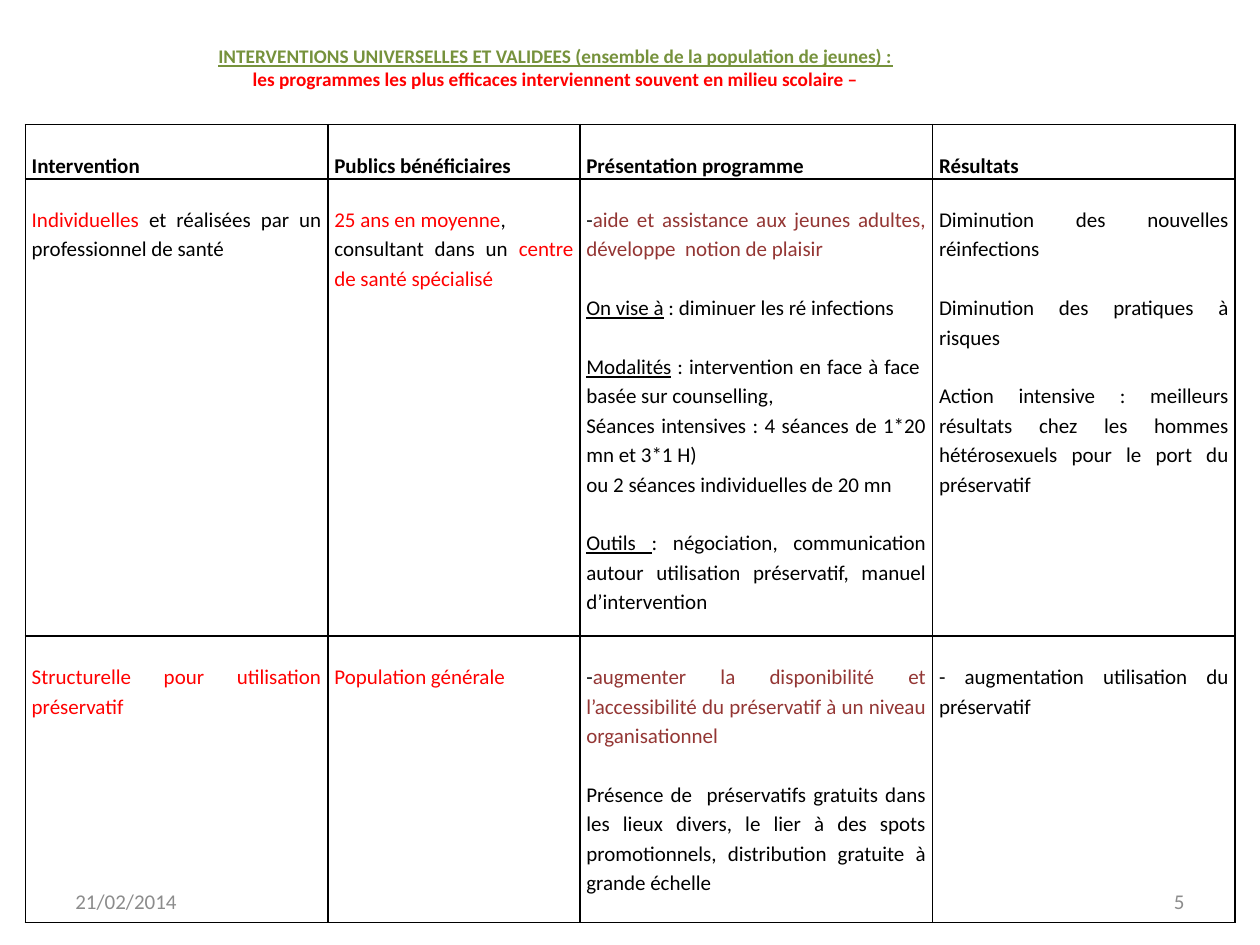
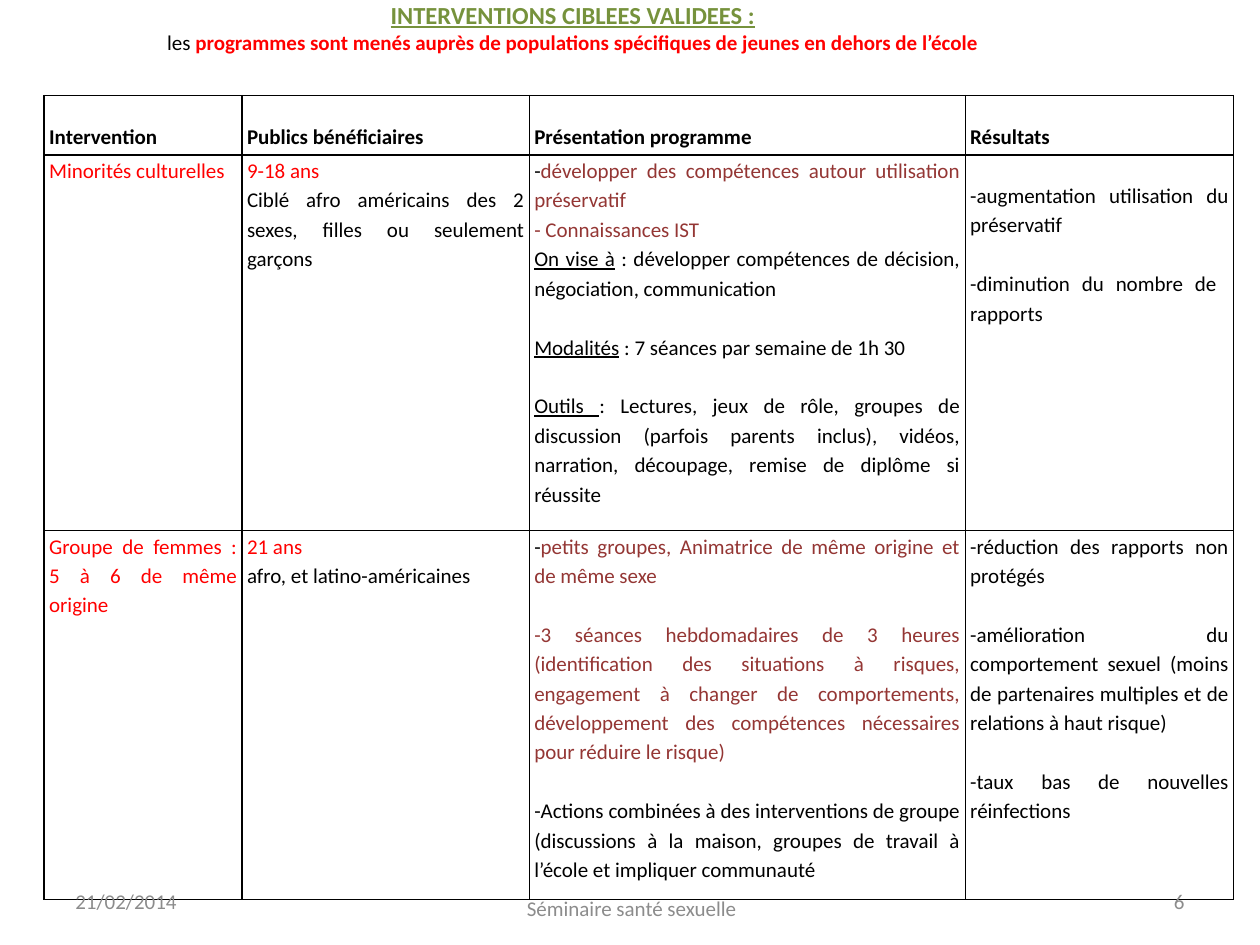
import pptx
import pptx.util
import pptx.dml.color
import pptx.enum.text
import pptx.oxml
import pptx.oxml.ns

Cm = pptx.util.Cm
Pt = pptx.util.Pt
Align = pptx.enum.text.PP_ALIGN
Anchor = pptx.enum.text.MSO_ANCHOR

FONT = "Calibri"
BLACK, RED, BROWN, GREEN, GREY = "000000", "FF0000", "943634", "76923C", "8C8C8C"
GAP = "^"
RUN_STYLES = {
    "*": (RED, False, False),
    "~": (BROWN, False, False),
    "_": (BLACK, False, True),
    "!": (BLACK, True, False),
    "+": (RED, True, False),
    "#": (GREEN, True, True),
    "@": (GREY, False, False),
}
HEADINGS = ["^!Intervention", "^!Publics bénéficiaires",
            "^!Présentation programme", "^!Résultats"]
DATE = "21/02/2014"

slides_content = [
    {
        "title": [
            ("#INTERVENTIONS UNIVERSELLES ET VALIDEES (ensemble de la population de jeunes) :", 11),
            ("+les programmes les plus efficaces interviennent souvent en milieu scolaire –", 11),
        ],
        "title_top": 0.9, "title_width": 22.4,
        "left": 0.51, "top": 2.51, "margin": 0.13,
        "columns": [6.1, 5.08, 7.11, 6.1],
        "rows": [1.09, 9.22, 5.77],
        "body": [
            [
                ["^*Individuelles| et réalisées par un professionnel de santé"],
                ["^*25 ans en moyenne|,",
                 "consultant dans un |*centre de santé spécialisé"],
                ["^-|~aide et assistance aux jeunes adultes, développe  notion de plaisir",
                 "^_On vise à| : diminuer les ré infections",
                 "^_Modalités| : intervention en face à face  basée sur counselling,",
                 "Séances intensives : 4 séances de 1*20 mn et 3*1 H)",
                 "ou 2 séances individuelles de 20 mn",
                 "^_Outils |: négociation, communication autour utilisation préservatif, "
                 "manuel d’intervention"],
                ["^Diminution des nouvelles réinfections",
                 "^Diminution des pratiques à risques",
                 "^Action intensive : meilleurs résultats chez les hommes hétérosexuels "
                 "pour le port du préservatif"],
            ],
            [
                ["^*Structurelle pour utilisation préservatif"],
                ["^*Population générale"],
                ["^-|~augmenter la disponibilité et l’accessibilité du préservatif "
                 "à un niveau organisationnel",
                 "^Présence de  préservatifs gratuits dans les lieux divers, le lier à des "
                 "spots promotionnels, distribution gratuite à grande échelle"],
                ["^- augmentation utilisation du préservatif"],
            ],
        ],
        "footers": [("5", 18.21, 17.65, 5.92, Align.RIGHT),
                    (DATE, 1.27, 17.65, 5.92, Align.LEFT)],
    },
    {
        "title": [
            ("#INTERVENTIONS CIBLEES VALIDEES :", 14),
            ("les |+programmes sont menés auprès de populations spécifiques de jeunes "
             "en dehors de l’école", 12),
        ],
        "title_top": 0, "title_width": 23.1,
        "left": 0.89, "top": 1.93, "margin": 0.1,
        "columns": [3.99, 5.79, 8.79, 5.41],
        "rows": [1.19, 7.57, 7.44],
        "body": [
            [
                ["*Minorités culturelles"],
                ["*9-18 ans",
                 "Ciblé afro américains des 2 sexes, filles ou seulement garçons"],
                ["-|~développer des compétences autour utilisation préservatif",
                 "~- Connaissances IST",
                 "_On vise à| : développer compétences de décision, négociation, communication",
                 "^_Modalités| : 7 séances par semaine de 1h 30",
                 "^_Outils |: Lectures, jeux de rôle, groupes de discussion (parfois parents "
                 "inclus), vidéos, narration, découpage, remise de diplôme si réussite"],
                ["^-augmentation utilisation du préservatif",
                 "^-diminution du nombre de  rapports"],
            ],
            [
                ["*Groupe de femmes : 5 à 6 de même origine"],
                ["*21 ans", "afro, et latino-américaines"],
                ["-|~petits groupes, Animatrice de même origine et de même sexe",
                 "^~-3 séances hebdomadaires de 3 heures (identification des situations à "
                 "risques, engagement à changer de comportements, développement des "
                 "compétences nécessaires pour réduire le risque)",
                 "^-Actions combinées à des interventions de groupe (discussions à la maison, "
                 "groupes de travail à l’école et impliquer communauté"],
                ["-réduction des rapports non protégés",
                 "^-amélioration du comportement sexuel (moins de partenaires multiples et "
                 "de relations à haut risque)",
                 "^-taux bas de nouvelles réinfections"],
            ],
        ],
        "footers": [("6", 18.21, 17.65, 5.92, Align.RIGHT),
                    ("Séminaire santé sexuelle", 8.71, 17.8, 8.05, Align.CENTER),
                    (DATE, 1.27, 17.65, 5.92, Align.LEFT)],
    },
]


def color(value):
    return pptx.dml.color.RGBColor.from_string(value)


def write(frame, lines, align, line_spacing=1.0):
    frame.word_wrap = True
    for index, (line, size) in enumerate(lines):
        paragraph = frame.paragraphs[0] if index == 0 else frame.add_paragraph()
        paragraph.alignment = align
        paragraph.line_spacing = line_spacing
        if line.startswith(GAP):
            line = line[1:]
            if index > 0:
                paragraph.space_before = Pt(16.8)
        for piece in line.split("|"):
            run_color, bold, underline = BLACK, False, False
            if piece[0] in RUN_STYLES:
                run_color, bold, underline = RUN_STYLES[piece[0]]
                piece = piece[1:]
            run = paragraph.add_run()
            run.text = piece
            run.font.name = FONT
            run.font.size = Pt(size)
            run.font.bold = bold
            run.font.underline = underline
            run.font.color.rgb = color(run_color)


deck = pptx.Presentation()
deck.slide_width = Cm(25.4)
deck.slide_height = Cm(19.05)

for content in slides_content:
    slide = deck.slides.add_slide(deck.slide_layouts[6])

    programmes = slide.shapes.add_table(
        len(content["rows"]), len(content["columns"]),
        Cm(content["left"]), Cm(content["top"]),
        Cm(sum(content["columns"])), Cm(sum(content["rows"]))).table
    programmes.first_row = False
    programmes.horz_banding = False
    for column, width in zip(programmes.columns, content["columns"]):
        column.width = Cm(width)
    for row, height in zip(programmes.rows, content["rows"]):
        row.height = Cm(height)

    entries = [[[heading] for heading in HEADINGS]] + content["body"]
    for row, row_entries in zip(programmes.rows, entries):
        for cell, lines in zip(row.cells, row_entries):
            cell.margin_left = cell.margin_right = Cm(content["margin"])
            cell.margin_top = Cm(0.5 if lines[0].startswith(GAP) else 0)
            cell.margin_bottom = 0
            cell.fill.background()
            write(cell.text_frame, [(line, 12) for line in lines], Align.JUSTIFY, 1.15)
            properties = cell._tc.get_or_add_tcPr()
            for position, side in enumerate("LRTB"):
                properties.insert(position, pptx.oxml.parse_xml(
                    f'<a:ln{side} {pptx.oxml.ns.nsdecls("a")} w="12700"><a:solidFill>'
                    f'<a:srgbClr val="{BLACK}"/></a:solidFill></a:ln{side}>'))

    title = slide.shapes.add_textbox(
        0, Cm(content["title_top"]), Cm(content["title_width"]), Cm(1.4)).text_frame
    title.margin_top = title.margin_bottom = 0
    write(title, content["title"], Align.CENTER)

    for text, left, top, width, align in content["footers"]:
        footer = slide.shapes.add_textbox(Cm(left), Cm(top), Cm(width), Cm(1.02)).text_frame
        footer.vertical_anchor = Anchor.MIDDLE
        write(footer, [("@" + text, 12)], align)

deck.save("out.pptx")
